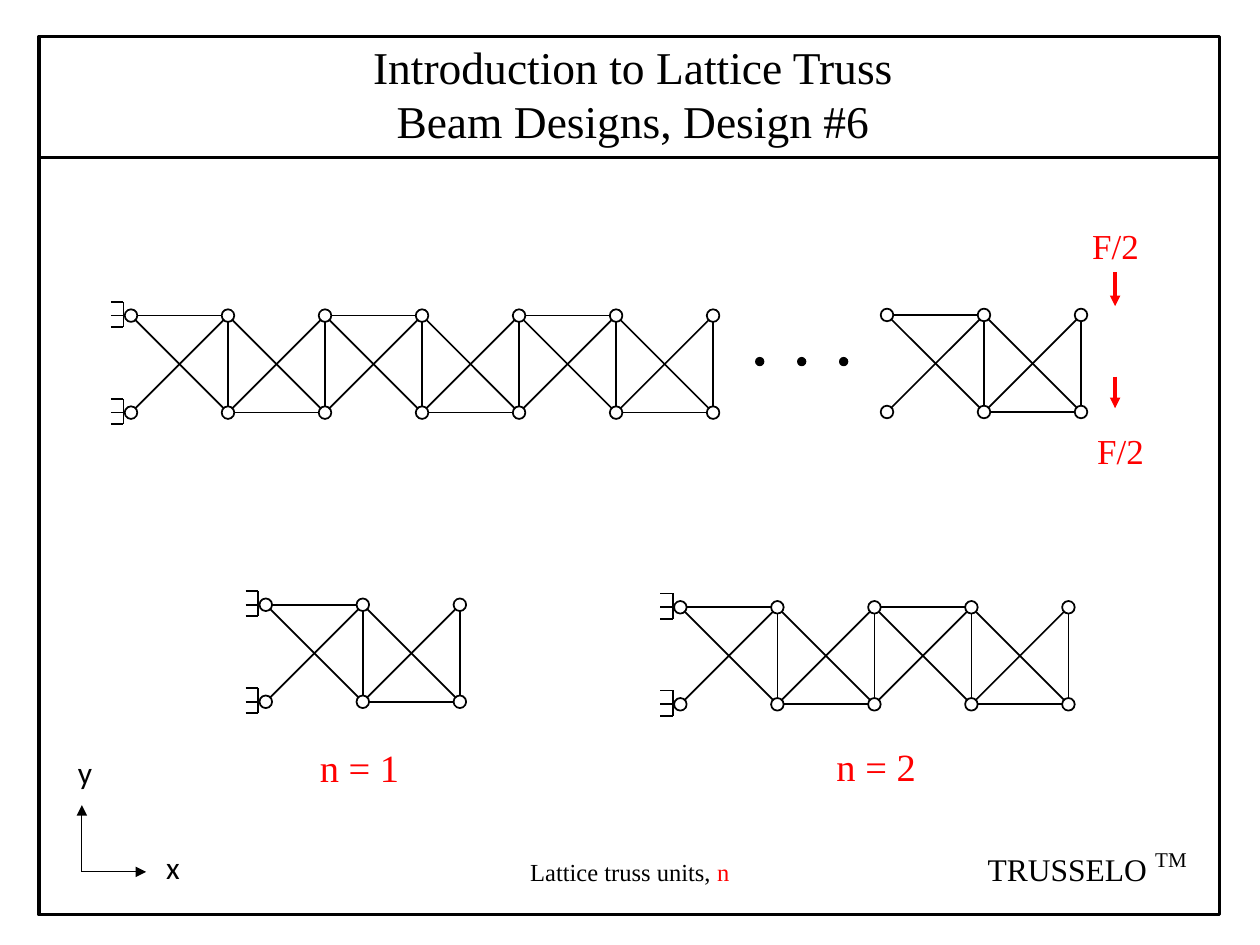
from pptx import Presentation
from pptx.dml.color import RGBColor
from pptx.enum.shapes import MSO_CONNECTOR, MSO_SHAPE
from pptx.enum.text import MSO_AUTO_SIZE, PP_ALIGN
from pptx.oxml.ns import qn
from pptx.util import Inches, Pt
from lxml.etree import SubElement

BLACK = RGBColor(0x00, 0x00, 0x00)
WHITE = RGBColor(0xFF, 0xFF, 0xFF)
RED = RGBColor(0xFF, 0x00, 0x00)

COLS, ROWS = 100, 75
BAY = 7.7  # width and height of one truss bay, in grid cells
JOINT = 1.0
DOT = 0.6


class Sketch:
    """Draws on one slide; every length is in cells of a COLS x ROWS grid."""

    serif = "Times New Roman"
    sans = "Calibri"

    def __init__(self, prs):
        self.slide = prs.slides.add_slide(prs.slide_layouts[6])
        self.cell = prs.slide_width / COLS

    def emu(self, *cells):
        return [round(c * self.cell) for c in cells]

    def line(self, x1, y1, x2, y2, color=BLACK, weight=1, arrow=False):
        c = self.slide.shapes.add_connector(
            MSO_CONNECTOR.STRAIGHT, *self.emu(x1, y1, x2, y2))
        c.line.color.rgb = color
        c.line.width = Pt(weight)
        if arrow:
            SubElement(c.line._get_or_add_ln(), qn("a:tailEnd"), type="triangle")
        SubElement(c._element.spPr, qn("a:effectLst"))

    def shape(self, kind, x, y, w, h, fill=None, weight=1):
        sp = self.slide.shapes.add_shape(kind, *self.emu(x, y, w, h))
        sp.shadow.inherit = False
        if fill is None:
            sp.fill.background()
        else:
            sp.fill.solid()
            sp.fill.fore_color.rgb = fill
        sp.line.color.rgb = BLACK
        sp.line.width = Pt(weight)

    def circle(self, cx, cy, size, fill):
        self.shape(MSO_SHAPE.OVAL, cx - size / 2, cy - size / 2, size, size, fill)

    def text(self, x, y, w, h, paragraphs, size, font=serif, align=PP_ALIGN.LEFT):
        """Each paragraph is a list of (words, colour) runs."""
        tf = self.slide.shapes.add_textbox(*self.emu(x, y, w, h)).text_frame
        tf.word_wrap = True
        tf.auto_size = MSO_AUTO_SIZE.SHAPE_TO_FIT_TEXT
        for i, runs in enumerate(paragraphs):
            p = tf.paragraphs[0] if i == 0 else tf.add_paragraph()
            p.alignment = align
            for words, color in runs:
                r = p.add_run()
                r.text = words
                r.font.color.rgb = color
                for name, value in {"name": font, "size": Pt(size)}.items():
                    setattr(r.font, name, value)

    def support(self, x, y):
        """Three-pronged wall fixing just left of the joint at x, y."""
        wall = x - 0.6
        self.line(wall, y - 1.1, wall, y + 0.9)
        for dy in (-1.1, 0, 0.9):
            self.line(wall - 1, y + dy, wall, y + dy)

    def truss(self, x, top, bays, fixed=True):
        """Cross-braced bays whose chord alternates between top and bottom."""
        bottom = top + BAY
        joints = [x + BAY * i for i in range(bays + 1)]
        for i, (left, right) in enumerate(zip(joints, joints[1:])):
            chord = bottom if i % 2 else top
            self.line(left, chord, right, chord)
            self.line(left, top, right, bottom)
            self.line(left, bottom, right, top)
            self.line(right, bottom, right, top)
        for y in (top, bottom):
            if fixed:
                self.support(x, y)
            for joint in joints:
                self.circle(joint, y, JOINT, WHITE)


def main():
    prs = Presentation()
    prs.slide_width, prs.slide_height = Inches(10), Inches(7.5)
    s = Sketch(prs)

    s.shape(MSO_SHAPE.RECTANGLE, 3.1, 2.9, 93.7, 69.7, weight=2)
    s.line(3.1, 12.5, 96.8, 12.5, weight=2)
    s.text(27.7, 2.6, 45.1, 9.8,
           [[("Introduction to Lattice Truss", BLACK)],
            [("Beam Designs, Design #6", BLACK)]], 26, align=PP_ALIGN.CENTER)

    s.truss(10.4, 25.05, bays=6)
    s.truss(70.4, 25, bays=2, fixed=False)
    for i in range(3):
        s.circle(60.3 + 3.33 * i, 28.7, DOT, BLACK)
    s.truss(21.1, 48, bays=2)
    s.truss(54, 48.2, bays=4)

    for y1, y2 in ((21.6, 24.3), (29.9, 32.4)):
        s.line(88.5, y1, 88.5, y2, RED, 2, arrow=True)
    for x, y in ((85.7, 17.3), (86.1, 33.6)):
        s.text(x, y, 7, 4.4, [[("F/2", RED)]], 20)
    for x, y, label in ((24.4, 58.6, "n = 1"), (65.4, 58.5, "n = 2")):
        s.text(x, y, 8.8, 4.7, [[(label, RED)]], 22)

    for x, y, label_x, label_y, label in ((11.6, 69.2, 12.2, 66.8, "x"),
                                          (6.5, 63.9, 5.2, 59.3, "y")):
        s.line(6.5, 69.2, x, y, weight=0.5, arrow=True)
        s.text(label_x, label_y, 3.1, 4, [[(label, BLACK)]], 18, s.sans)

    s.text(41.1, 67.5, 18.5, 3.4,
           [[("Lattice truss units, ", BLACK), ("n", RED)]], 14)
    s.text(77.4, 67, 15.2, 4, [[("TRUSSELO", BLACK)]], 18)
    s.text(90.7, 66.7, 5.1, 3, [[("TM", BLACK)]], 12)

    prs.save("out.pptx")


if __name__ == "__main__":
    main()
